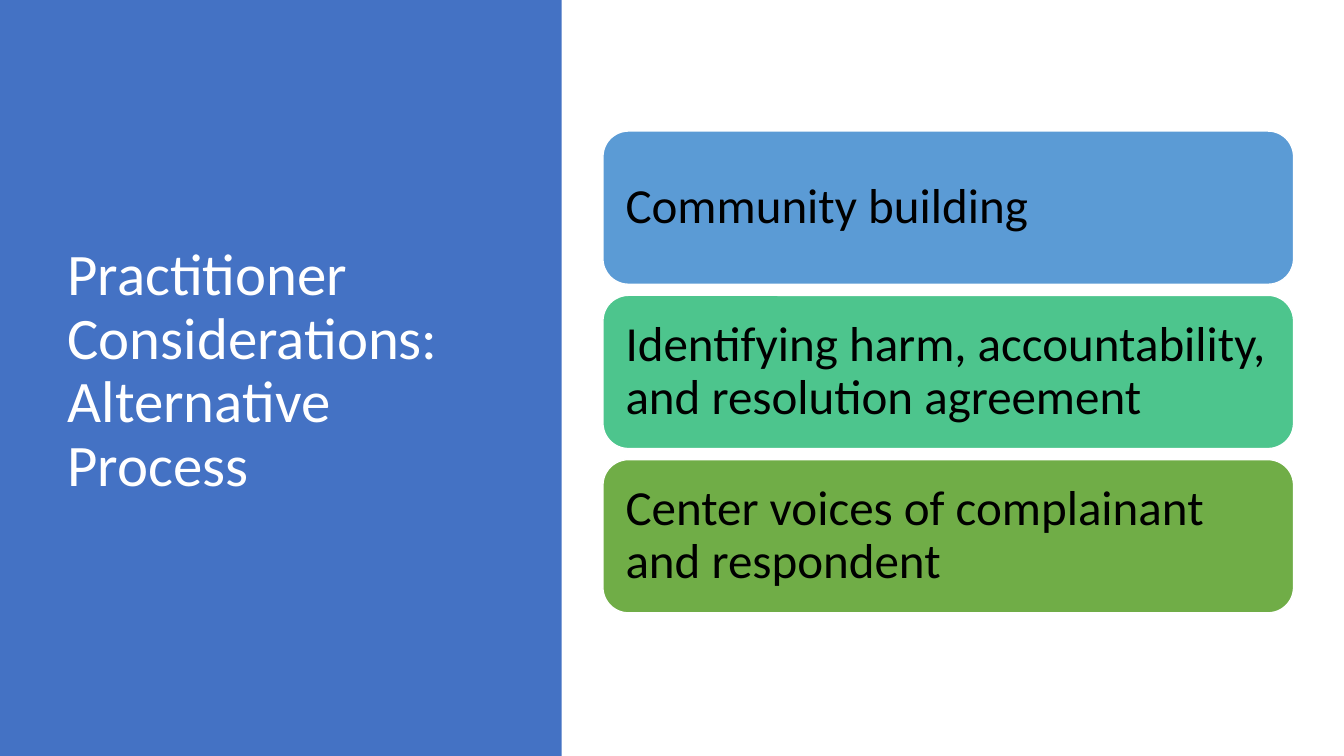
from pptx import Presentation
from pptx.dml.color import RGBColor
from pptx.enum.shapes import MSO_SHAPE as Shape
from pptx.enum.text import MSO_ANCHOR as Anchor, MSO_AUTO_SIZE as AutoSize, PP_ALIGN as Align
from pptx.util import Inches, Pt

COLORS = {
    "panel": "4472C4",
    "blue": "5B9BD5",
    "teal": "4DC58D",
    "green": "70AD47",
    "white": "FFFFFF",
    "black": "000000",
}
CONSIDERATIONS = [
    ("Community building", "blue"),
    ("Identifying harm, accountability, and resolution agreement", "teal"),
    ("Center voices of complainant and respondent", "green"),
]
CARD_TOP, CARD_PITCH = 1.3, 1.63


def color(name):
    return RGBColor.from_string(COLORS[name])


def write_text(shape, text, size, color_name):
    frame = shape.text_frame
    frame.text = text
    frame.word_wrap = True
    frame.auto_size = AutoSize.NONE
    frame.vertical_anchor = Anchor.MIDDLE
    paragraph = frame.paragraphs[0]
    paragraph.alignment = Align.LEFT
    paragraph.line_spacing = 0.9
    paragraph.font.name = "Calibri"
    paragraph.font.size = Pt(size)
    paragraph.font.color.rgb = color(color_name)


presentation = Presentation()
presentation.slide_width = Inches(13.33)
presentation.slide_height = Inches(7.5)
slide = presentation.slides.add_slide(presentation.slide_layouts[5])
shapes = slide.shapes

panel = shapes.add_shape(Shape.RECTANGLE, 0, 0, Inches(5.57), Inches(7.5))
panel.shadow.inherit = False
panel.fill.solid()
panel.fill.fore_color.rgb = color("panel")
panel.line.fill.background()

title = shapes.title
title.left, title.top = Inches(0.57), Inches(0.68)
title.width, title.height = Inches(4.16), Inches(6.02)
write_text(title, "Practitioner Considerations: \vAlternative Process", 42, "white")
panel._element.addnext(title._element)

for index, (text, fill_name) in enumerate(CONSIDERATIONS):
    card = shapes.add_shape(
        Shape.ROUNDED_RECTANGLE,
        Inches(5.98), Inches(CARD_TOP + index * CARD_PITCH), Inches(6.85), Inches(1.52),
    )
    card.shadow.inherit = False
    card.fill.solid()
    card.fill.fore_color.rgb = color(fill_name)
    card.line.color.rgb = color("white")
    card.line.width = Pt(1)
    frame = card.text_frame
    frame.margin_left = frame.margin_right = Inches(0.15)
    frame.margin_top = frame.margin_bottom = Inches(0.15)
    write_text(card, text, 35, "black")

presentation.save("out.pptx")
